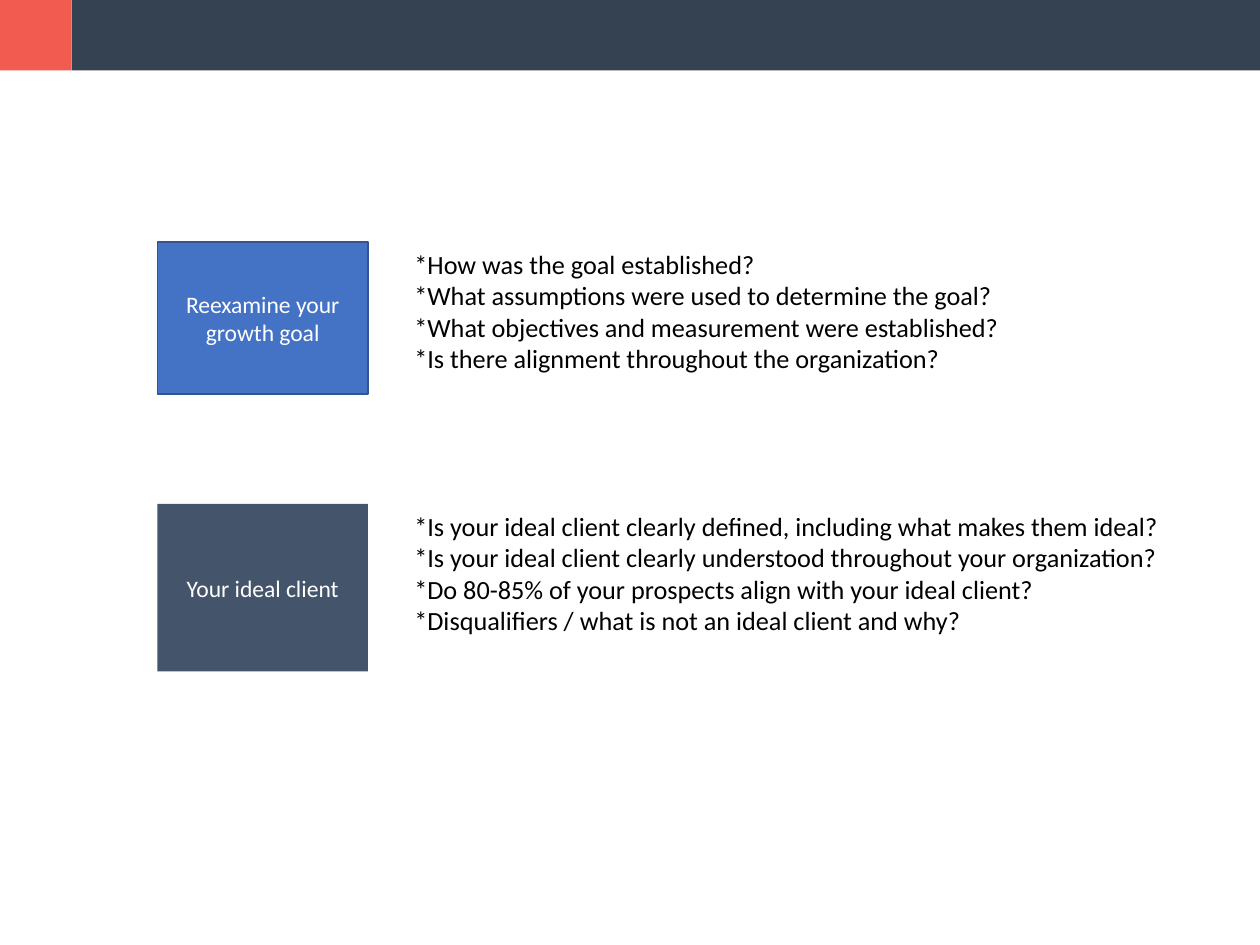
"""Build a slide pairing two growth topics with the questions to ask about each."""
from dataclasses import dataclass
from typing import Optional

from pptx import Presentation
from pptx.dml.color import RGBColor
from pptx.enum.shapes import MSO_SHAPE
from pptx.enum.text import MSO_ANCHOR, MSO_AUTO_SIZE, PP_ALIGN
from pptx.shapes.autoshape import Shape
from pptx.slide import Slide
from pptx.util import Inches, Pt

RECTANGLE = MSO_SHAPE.RECTANGLE
MIDDLE = MSO_ANCHOR.MIDDLE
CENTER = PP_ALIGN.CENTER
LEFT = PP_ALIGN.LEFT
FIT_SHAPE = MSO_AUTO_SIZE.SHAPE_TO_FIT_TEXT

SLIDE_WIDTH, SLIDE_HEIGHT = 10, 7.5
BAND_HEIGHT, ACCENT_WIDTH = 0.56, 0.57
TOPIC_LEFT, TOPIC_WIDTH = 1.25, 1.67
QUESTIONS_LEFT, QUESTIONS_HEIGHT = 3.19, 1.11


@dataclass(frozen=True)
class Theme:
    """Colours and type of the slide."""
    font: str = "Calibri"
    topic_size: float = 13.5
    question_size: float = 15
    accent: str = "F15B50"
    band: str = "354252"
    blue: str = "4472C4"
    blue_edge: str = "325491"
    slate: str = "44546A"
    light: str = "FFFFFF"
    dark: str = "000000"


@dataclass(frozen=True)
class Topic:
    """A labelled block and the questions beside it."""
    label: str
    top: float
    height: float
    fill: str
    edge: Optional[str]
    questions_width: float
    questions: tuple[str, ...]


THEME = Theme()
TOPICS = (
    Topic("Reexamine your growth goal", 1.92, 1.21, THEME.blue, THEME.blue_edge, 5.65, (
        "*How was the goal established?",
        "*What assumptions were used to determine the goal?",
        "*What objectives and measurement were established?",
        "*Is there alignment throughout the organization?",
    )),
    Topic("Your ideal client", 4, 1.33, THEME.slate, None, 6.36, (
        "*Is your ideal client clearly defined, including what makes them ideal?",
        "*Is your ideal client clearly understood throughout your organization?",
        "*Do 80-85% of your prospects align with your ideal client?",
        "*Disqualifiers / what is not an ideal client and why?",
    )),
)


def add_block(slide: Slide, left: float, top: float, width: float, height: float,
              fill: str, edge: Optional[str] = None) -> Shape:
    """Draw a flat rectangle, outlined when an edge colour is given."""
    block = slide.shapes.add_shape(
        RECTANGLE, Inches(left), Inches(top), Inches(width), Inches(height))
    block.shadow.inherit = False
    block.fill.solid()
    block.fill.fore_color.rgb = RGBColor.from_string(fill)
    if edge:
        block.line.color.rgb = RGBColor.from_string(edge)
        block.line.width = Pt(1)
    else:
        block.line.fill.background()
    return block


def write(holder: Shape, lines: tuple[str, ...], size: float, color: str,
          alignment: PP_ALIGN) -> None:
    """Fill a shape with one paragraph per line."""
    frame = holder.text_frame
    frame.word_wrap = True
    frame.text = "\n".join(lines)
    for paragraph in frame.paragraphs:
        paragraph.alignment = alignment
        paragraph.font.name = THEME.font
        paragraph.font.size = Pt(size)
        paragraph.font.color.rgb = RGBColor.from_string(color)


def add_topic(slide: Slide, topic: Topic) -> None:
    """Draw a topic block with its questions to the right."""
    block = add_block(slide, TOPIC_LEFT, topic.top, TOPIC_WIDTH, topic.height,
                      topic.fill, topic.edge)
    block.text_frame.vertical_anchor = MIDDLE
    write(block, (topic.label,), THEME.topic_size, THEME.light, CENTER)
    questions = slide.shapes.add_textbox(
        Inches(QUESTIONS_LEFT), Inches(topic.top),
        Inches(topic.questions_width), Inches(QUESTIONS_HEIGHT))
    questions.text_frame.auto_size = FIT_SHAPE
    write(questions, topic.questions, THEME.question_size, THEME.dark, LEFT)


def main() -> None:
    """Build and save the slide."""
    deck = Presentation()
    deck.slide_width, deck.slide_height = Inches(SLIDE_WIDTH), Inches(SLIDE_HEIGHT)
    slide = deck.slides.add_slide(deck.slide_layouts.get_by_name("Blank"))
    add_block(slide, 0, 0, ACCENT_WIDTH, BAND_HEIGHT, THEME.accent)
    add_block(slide, ACCENT_WIDTH, 0, SLIDE_WIDTH - ACCENT_WIDTH, BAND_HEIGHT, THEME.band)
    for topic in TOPICS:
        add_topic(slide, topic)
    deck.save("out.pptx")


if __name__ == "__main__":
    main()
